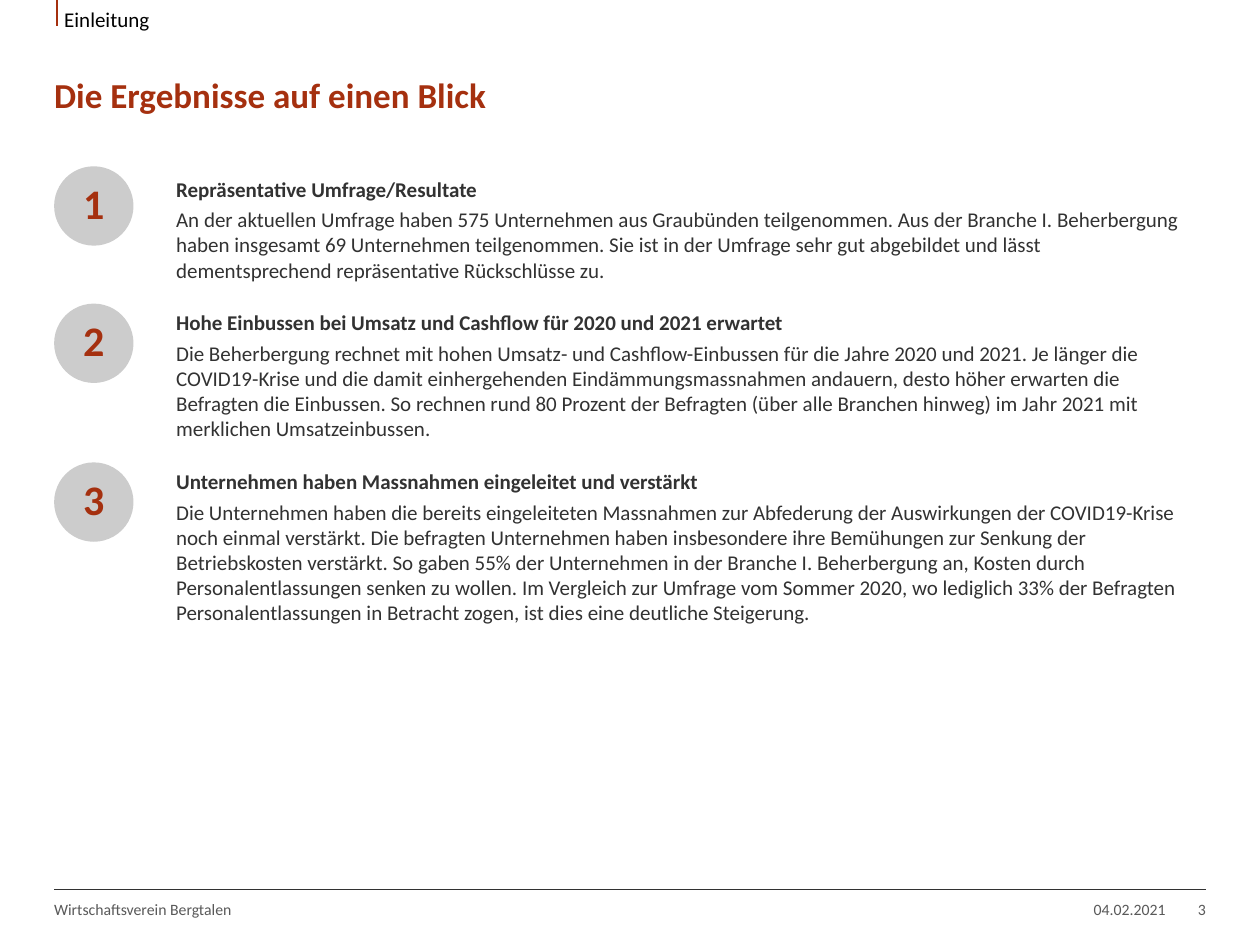
"""Build the summary slide with three numbered survey findings."""
from dataclasses import dataclass

from lxml.etree import SubElement
from pptx import Presentation
from pptx.dml.color import RGBColor
from pptx.enum.shapes import MSO_CONNECTOR as Connector, MSO_SHAPE as Shape
from pptx.enum.text import MSO_ANCHOR as Anchor, MSO_AUTO_SIZE as AutoSize, PP_ALIGN as Align
from pptx.oxml.ns import qn
from pptx.slide import Slide
from pptx.text.text import TextFrame, _Paragraph as Paragraph
from pptx.util import Inches, Pt

RUST = RGBColor(0xA5, 0x30, 0x0F)
CHARCOAL = RGBColor(0x32, 0x32, 0x32)
GREY = RGBColor(0x59, 0x59, 0x59)
SILVER = RGBColor(0xCC, 0xCC, 0xCC)
BLACK = RGBColor(0, 0, 0)

FONT = "Calibri"
WIDTH, HEIGHT = 10, 7.5
LEFT = 0.43
RIGHT = WIDTH - LEFT
TEXT_COLUMN = 1.3
FIRST_ROW = 1.35
ROW_GAP = 0.11
LINE_HEIGHT = 0.2
ROW_PADDING = 0.35
BADGE_SIZE = 0.63
FOOTER_TOP, FOOTER_HEIGHT = 7.14, 0.31


@dataclass(frozen=True)
class Label:
    text: str
    left: float
    top: float
    width: float
    height: float
    size: float
    color: RGBColor
    bold: bool = False
    align: Align = Align.LEFT
    anchor: Anchor = Anchor.TOP
    inset_top: float = 0
    line_spacing: float = 1.0


@dataclass(frozen=True)
class Finding:
    heading: str
    body: str
    lines: int
    badge_rise: float = 0

    @property
    def height(self) -> float:
        return ROW_PADDING + LINE_HEIGHT * self.lines


@dataclass(frozen=True)
class Rule:
    start: tuple[float, float]
    end: tuple[float, float]
    color: RGBColor
    weight: float


RULES = (
    Rule((LEFT, 7.06), (RIGHT, 7.06), CHARCOAL, 0.5),
    Rule((0.45, 0), (0.45, 0.21), RUST, 1),
)
LABELS = (
    Label("Die Ergebnisse auf einen Blick", LEFT, 0.29, RIGHT - LEFT, 0.63, 20, RUST,
          bold=True, anchor=Anchor.BOTTOM, line_spacing=0.9),
    Label("04.02.2021", 6.73, FOOTER_TOP, 2.52, FOOTER_HEIGHT, 9, GREY, align=Align.RIGHT),
    Label("Wirtschaftsverein Bergtalen", LEFT, FOOTER_TOP, 6, FOOTER_HEIGHT, 9, GREY),
    Label("3", RIGHT - 0.24, FOOTER_TOP, 0.24, FOOTER_HEIGHT, 9, GREY, align=Align.RIGHT),
    Label("Einleitung", 0.51, 0, 9.06, 0.29, 12, BLACK, inset_top=0.05),
)
FINDINGS = (
    Finding(
        "Repräsentative Umfrage/Resultate",
        "An der aktuellen Umfrage haben 575 Unternehmen aus Graubünden teilgenommen. "
        "Aus der Branche I. Beherbergung haben insgesamt 69 Unternehmen teilgenommen. "
        "Sie ist in der Umfrage sehr gut abgebildet und lässt dementsprechend "
        "repräsentative Rückschlüsse zu.",
        lines=3, badge_rise=0.03),
    Finding(
        "Hohe Einbussen bei Umsatz und Cashflow für 2020 und 2021 erwartet",
        "Die Beherbergung rechnet mit hohen Umsatz- und Cashflow-Einbussen für die Jahre "
        "2020 und 2021. Je länger die COVID19-Krise und die damit einhergehenden "
        "Eindämmungsmassnahmen andauern, desto höher erwarten die Befragten die Einbussen. "
        "So rechnen rund 80 Prozent der Befragten (über alle Branchen hinweg) im Jahr 2021 "
        "mit merklichen Umsatzeinbussen.",
        lines=4),
    Finding(
        "Unternehmen haben Massnahmen eingeleitet und verstärkt",
        "Die Unternehmen haben die bereits eingeleiteten Massnahmen zur Abfederung der "
        "Auswirkungen der COVID19-Krise noch einmal verstärkt. Die befragten Unternehmen "
        "haben insbesondere ihre Bemühungen zur Senkung der Betriebskosten verstärkt. So "
        "gaben 55% der Unternehmen in der Branche I. Beherbergung an, Kosten durch "
        "Personalentlassungen senken zu wollen. Im Vergleich zur Umfrage vom Sommer 2020, "
        "wo lediglich 33% der Befragten Personalentlassungen in Betracht zogen, ist dies "
        "eine deutliche Steigerung.",
        lines=5),
)


def add_run(paragraph: Paragraph, text: str, size: float, color: RGBColor, bold: bool) -> None:
    run = paragraph.add_run()
    run.text = text
    run.font.name = FONT
    run.font.size = Pt(size)
    run.font.bold = bold
    run.font.color.rgb = color


def set_insets(frame: TextFrame, top: float = 0) -> None:
    frame.margin_left = frame.margin_right = frame.margin_bottom = 0
    frame.margin_top = Inches(top)


def add_text_frame(slide: Slide, left: float, top: float, width: float, height: float) -> TextFrame:
    box = slide.shapes.add_textbox(Inches(left), Inches(top), Inches(width), Inches(height))
    box.text_frame.word_wrap = True
    return box.text_frame


def draw_rule(slide: Slide, rule: Rule) -> None:
    points = (Inches(value) for value in (*rule.start, *rule.end))
    connector = slide.shapes.add_connector(Connector.STRAIGHT, *points)
    connector.line.color.rgb = rule.color
    connector.line.width = Pt(rule.weight)
    SubElement(connector._element.spPr, qn("a:effectLst"))


def draw_label(slide: Slide, label: Label) -> None:
    frame = add_text_frame(slide, label.left, label.top, label.width, label.height)
    set_insets(frame, label.inset_top)
    frame.vertical_anchor = label.anchor
    paragraph = frame.paragraphs[0]
    paragraph.alignment = label.align
    paragraph.line_spacing = label.line_spacing
    add_run(paragraph, label.text, label.size, label.color, label.bold)


def draw_badge(slide: Slide, number: int, top: float) -> None:
    size = Inches(BADGE_SIZE)
    badge = slide.shapes.add_shape(Shape.OVAL, Inches(LEFT), Inches(top), size, size)
    badge.shadow.inherit = False
    badge.fill.solid()
    badge.fill.fore_color.rgb = SILVER
    badge.line.fill.background()
    frame = badge.text_frame
    set_insets(frame)
    frame.vertical_anchor = Anchor.MIDDLE
    paragraph = frame.paragraphs[0]
    paragraph.alignment = Align.CENTER
    paragraph.line_spacing = 0.9
    paragraph.space_before = Pt(3)
    add_run(paragraph, str(number), 24, RUST, True)


def draw_finding(slide: Slide, finding: Finding, number: int, top: float) -> None:
    draw_badge(slide, number, top - finding.badge_rise)
    frame = add_text_frame(slide, TEXT_COLUMN, top, RIGHT - TEXT_COLUMN, finding.height)
    frame.auto_size = AutoSize.SHAPE_TO_FIT_TEXT
    heading, body = frame.paragraphs[0], frame.add_paragraph()
    for paragraph, text in ((heading, finding.heading), (body, finding.body)):
        paragraph.space_after = Pt(3)
        add_run(paragraph, text, 12, CHARCOAL, paragraph is heading)


def main() -> None:
    presentation = Presentation()
    presentation.slide_width, presentation.slide_height = Inches(WIDTH), Inches(HEIGHT)
    slide = presentation.slides.add_slide(presentation.slide_layouts[6])
    for rule in RULES:
        draw_rule(slide, rule)
    for label in LABELS:
        draw_label(slide, label)
    top = FIRST_ROW
    for number, finding in enumerate(FINDINGS, start=1):
        draw_finding(slide, finding, number, top)
        top += finding.height + ROW_GAP
    presentation.save("out.pptx")


if __name__ == "__main__":
    main()
